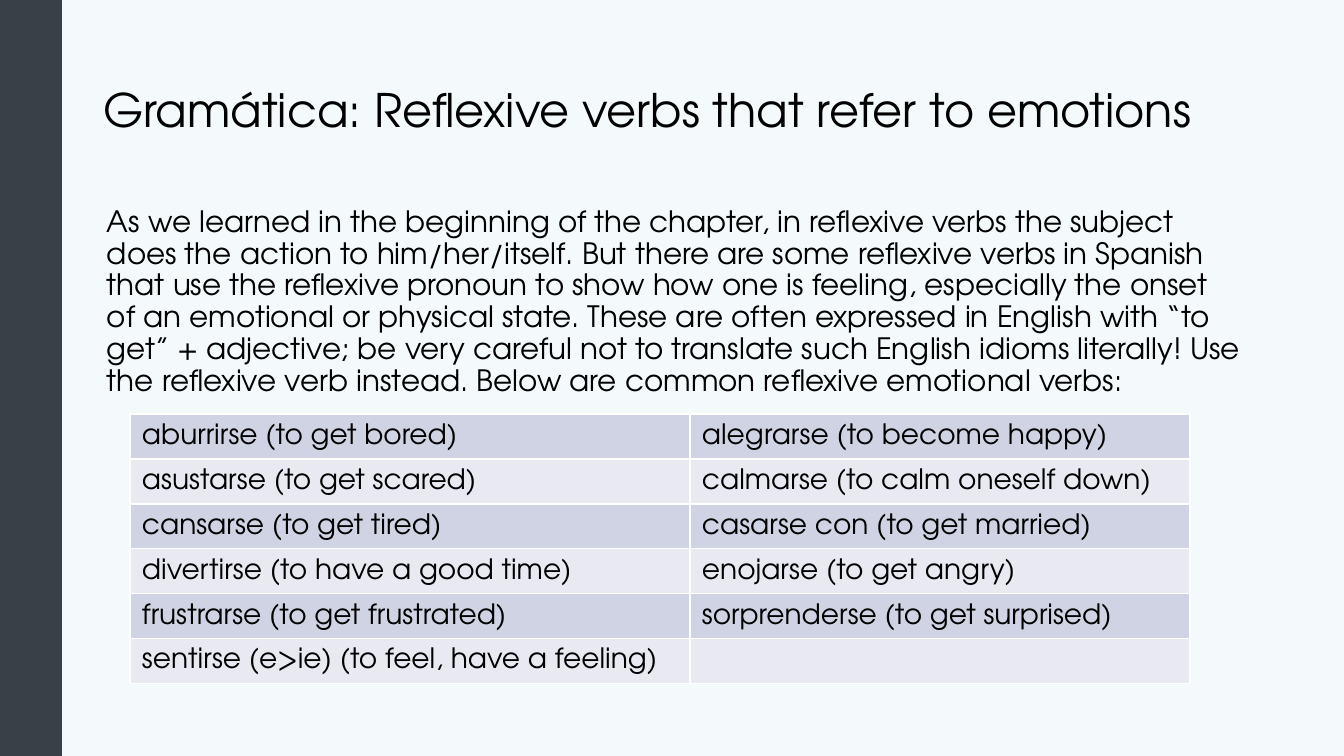
import pptx
import pptx.util
import pptx.dml.color
import pptx.enum.shapes
import pptx.enum.text
import pptx.oxml
import pptx.oxml.ns

RGBColor = pptx.dml.color.RGBColor
BACKGROUND = RGBColor(0xF4, 0xF9, 0xFC)
SIDEBAR = RGBColor(0x3A, 0x40, 0x47)
BLACK = RGBColor(0, 0, 0)
ROW_FILLS = [RGBColor(0xD0, 0xD3, 0xE3), RGBColor(0xE9, 0xEA, 0xF1)]
FONT = "TeX Gyre Adventor"
INTRO = (
    "As we learned in the beginning of the chapter, in reflexive verbs the subject "
    "does the action to him/her/itself. But there are some reflexive verbs in Spanish "
    "that use the reflexive pronoun to show how one is feeling, especially the onset "
    "of an emotional or physical state. These are often expressed in English with “to "
    "get” + adjective; be very careful not to translate such English idioms literally! "
    "Use the reflexive verb instead. Below are common reflexive emotional verbs:"
)
VERBS = [
    ("aburrirse (to get bored)", "alegrarse (to become happy)"),
    ("asustarse (to get scared)", "calmarse (to calm oneself down)"),
    ("cansarse (to get tired)", "casarse con (to get married)"),
    ("divertirse (to have a good time)", "enojarse (to get angry)"),
    ("frustrarse (to get frustrated)", "sorprenderse (to get surprised)"),
    ("sentirse (e>ie) (to feel, have a feeling)", ""),
]
COL_WIDTHS = [560, 500]
ROW_HEIGHT = 45


def px(n):
    return pptx.util.Emu(round(n * 914400 / 100.8))


def add_run(p, text, size):
    r = p.add_run()
    r.text = text
    r.font.name = FONT
    r.font.size = pptx.util.Pt(size)
    r.font.color.rgb = BLACK


prs = pptx.Presentation()
prs.slide_width, prs.slide_height = px(1344), px(756)
s = prs.slides.add_slide(prs.slide_layouts[5])
s.background.fill.solid()
s.background.fill.fore_color.rgb = BACKGROUND

sp = s.shapes.add_shape(pptx.enum.shapes.MSO_SHAPE.RECTANGLE, 0, 0, px(62), px(756))
sp.shadow.inherit = False
sp.fill.solid()
sp.fill.fore_color.rgb = SIDEBAR
sp.line.fill.background()

title = s.shapes.title
title.left, title.top, title.width, title.height = px(93), px(40), px(1159), px(146)
tf = title.text_frame
tf.word_wrap = True
tf.auto_size = pptx.enum.text.MSO_AUTO_SIZE.NONE
tf.vertical_anchor = pptx.enum.text.MSO_ANCHOR.MIDDLE
p = tf.paragraphs[0]
p.alignment = pptx.enum.text.PP_ALIGN.LEFT
p.line_spacing = 0.9
add_run(p, "Gramática: Reflexive verbs that refer to emotions", 33)

tf = s.shapes.add_textbox(px(93), px(202), px(1159), px(480)).text_frame
tf.word_wrap = True
p = tf.paragraphs[0]
p.line_spacing = 0.9
p.space_before = pptx.util.Pt(7.5)
p._p.get_or_add_pPr().set("marL", str(px(4)))
add_run(p, INTRO, 21)

table = s.shapes.add_table(
    len(VERBS), len(COL_WIDTHS), px(130), px(414),
    px(sum(COL_WIDTHS)), px(ROW_HEIGHT * len(VERBS)),
).table
table.first_row = False
for col, width in zip(table.columns, COL_WIDTHS):
    col.width = px(width)
for i, verbs in enumerate(VERBS):
    table.rows[i].height = px(ROW_HEIGHT)
    for j, verb in enumerate(verbs):
        cell = table.cell(i, j)
        cell.margin_left = cell.margin_right = px(12)
        cell.margin_top = cell.margin_bottom = px(5)
        cell.vertical_anchor = pptx.enum.text.MSO_ANCHOR.MIDDLE
        tcPr = cell._tc.get_or_add_tcPr()
        for side in ("lnL", "lnR", "lnT", "lnB"):
            tcPr.append(pptx.oxml.parse_xml(
                f'<a:{side} {pptx.oxml.ns.nsdecls("a")} w="12700">'
                f'<a:solidFill><a:srgbClr val="FFFFFF"/></a:solidFill></a:{side}>'
            ))
        cell.fill.solid()
        cell.fill.fore_color.rgb = ROW_FILLS[i % 2]
        if verb:
            add_run(cell.text_frame.paragraphs[0], verb, 20)

prs.save("out.pptx")
